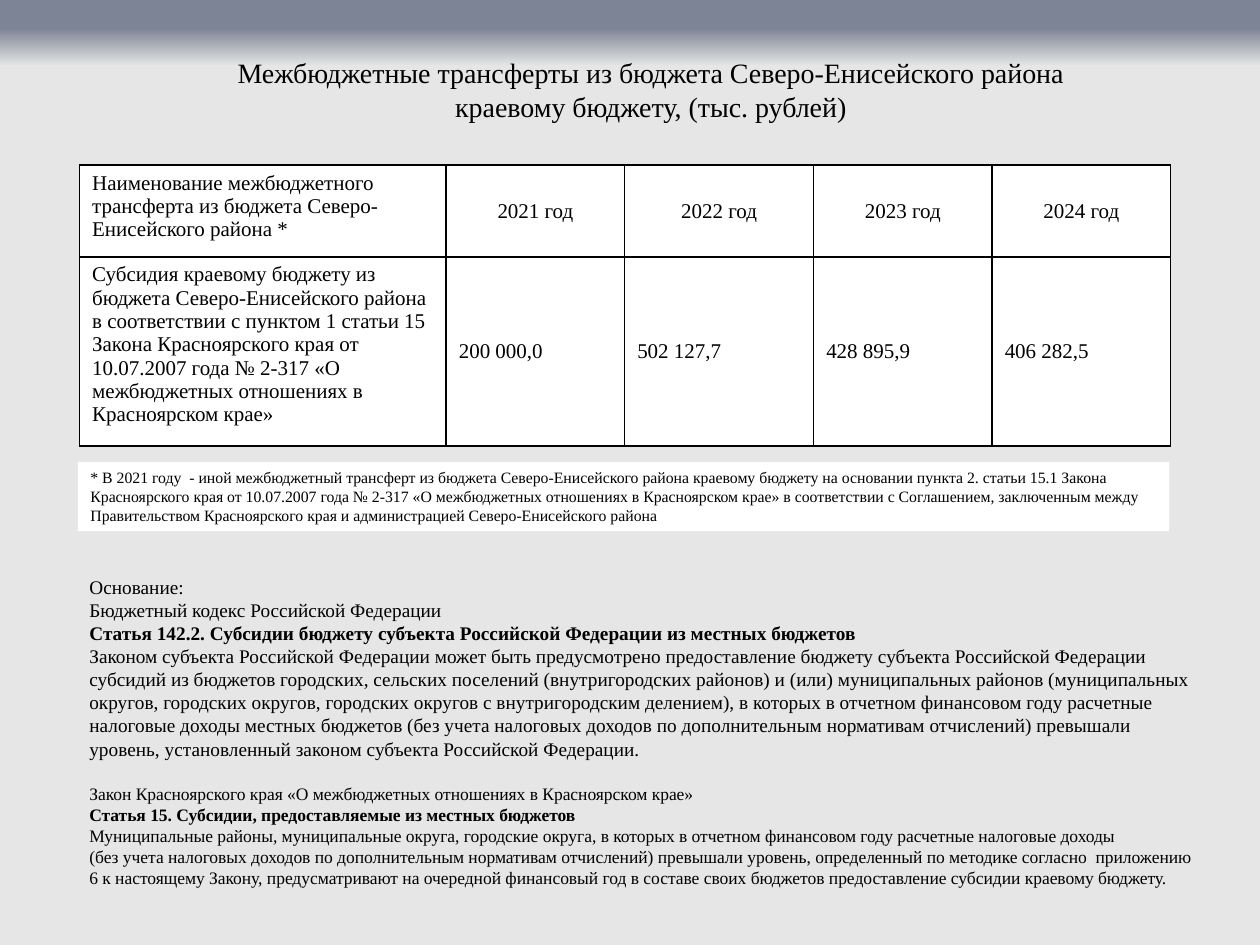
from dataclasses import dataclass

from lxml.etree import SubElement
from pptx import Presentation
from pptx.dml.color import RGBColor
from pptx.enum.shapes import MSO_SHAPE
from pptx.enum.text import MSO_ANCHOR, PP_ALIGN
from pptx.oxml.ns import qn
from pptx.util import Pt

FONT = "Times New Roman"
BLACK, WHITE, SLATE, GREY = "000000", "FFFFFF", "7D8496", "E6E6E6"


@dataclass
class Para:
    text: str
    size: float
    bold: bool = False
    align: PP_ALIGN = PP_ALIGN.LEFT
    before: float = 0


@dataclass
class Box:
    left: float
    top: float
    width: float
    height: float

    def lengths(self) -> list:
        return [Pt(v) for v in (self.left, self.top, self.width, self.height)]


def color(value: str) -> RGBColor:
    return RGBColor.from_string(value)


def apply(target, formats: dict) -> None:
    for name, value in formats.items():
        setattr(target, name, value)


def write(tf, paras: list[Para]) -> None:
    for i, para in enumerate(paras):
        p = tf.add_paragraph() if i else tf.paragraphs[0]
        apply(p, {"alignment": para.align, "space_before": Pt(para.before)})
        r = p.add_run()
        r.text = para.text
        apply(r.font, {"name": FONT, "size": Pt(para.size), "bold": para.bold})
        r.font.color.rgb = color(BLACK)


def add_text(s, box: Box, paras: list[Para], anchor: MSO_ANCHOR) -> None:
    tf = s.shapes.add_textbox(*box.lengths()).text_frame
    apply(tf, {"word_wrap": True, "vertical_anchor": anchor})
    write(tf, paras)


def add_note(s, box: Box, para: Para) -> None:
    sp = s.shapes.add_shape(MSO_SHAPE.RECTANGLE, *box.lengths())
    sp.shadow.inherit = False
    sp.fill.solid()
    sp.fill.fore_color.rgb = color(WHITE)
    sp.line.fill.background()
    apply(sp.text_frame, {"word_wrap": True, "vertical_anchor": MSO_ANCHOR.MIDDLE})
    write(sp.text_frame, [para])


def set_background(s, stops: list[tuple[int, str]]) -> None:
    fill = s.background.fill
    fill.gradient()
    fill.gradient_angle = 270
    gs_list = next(s.element.iter(qn("a:gsLst")))
    for gs in list(gs_list):
        gs_list.remove(gs)
    for percent, value in stops:
        gs = SubElement(gs_list, qn("a:gs"), pos=str(percent * 1000))
        SubElement(gs, qn("a:srgbClr"), val=value)


def add_borders(cell) -> None:
    props = cell._tc.get_or_add_tcPr()
    for i, side in enumerate(("lnL", "lnR", "lnT", "lnB")):
        ln = props.makeelement(qn(f"a:{side}"), {"w": str(Pt(1))})
        props.insert(i, ln)
        SubElement(SubElement(ln, qn("a:solidFill")), qn("a:srgbClr"), val=BLACK)


def add_grid(s, box: Box, widths: list[float], heights: list[float],
             rows: list[list[str]]) -> None:
    table = s.shapes.add_table(len(rows), len(widths), *box.lengths()).table
    for column, width in zip(table.columns, widths):
        column.width = Pt(width)
    for row, height in zip(table.rows, heights):
        row.height = Pt(height)
    for i, texts in enumerate(rows):
        for j, text in enumerate(texts):
            cell = table.cell(i, j)
            cell.fill.solid()
            cell.fill.fore_color.rgb = color(WHITE)
            cell.vertical_anchor = MSO_ANCHOR.MIDDLE if j else MSO_ANCHOR.TOP
            align = PP_ALIGN.CENTER if j and not i else PP_ALIGN.LEFT
            write(cell.text_frame, [Para(text, 12, align=align)])
            add_borders(cell)


TITLE = [
    "Межбюджетные трансферты из бюджета Северо-Енисейского района",
    "краевому бюджету, (тыс. рублей)",
]
ROWS = [
    ["Наименование межбюджетного трансферта из бюджета Северо-Енисейского района *",
     *(f"{year} год" for year in range(2021, 2025))],
    ["Субсидия краевому бюджету из бюджета Северо-Енисейского района в соответствии "
     "с пунктом 1 статьи 15 Закона Красноярского края от 10.07.2007 года № 2-317 "
     "«О межбюджетных отношениях в Красноярском крае»",
     "200 000,0", "502 127,7", "428 895,9", "406 282,5"],
]
NOTE = (
    "* В 2021 году  - иной межбюджетный трансферт из бюджета Северо-Енисейского района "
    "краевому бюджету на основании пункта 2. статьи 15.1 Закона Красноярского края "
    "от 10.07.2007 года № 2-317 «О межбюджетных отношениях в Красноярском крае» "
    "в соответствии с Соглашением, заключенным между Правительством Красноярского края "
    "и администрацией Северо-Енисейского района"
)
BASIS = [
    Para("Основание:", 11),
    Para("Бюджетный кодекс Российской Федерации", 11),
    Para("Статья 142.2. Субсидии бюджету субъекта Российской Федерации "
         "из местных бюджетов", 11, bold=True),
    Para("Законом субъекта Российской Федерации может быть предусмотрено предоставление "
         "бюджету субъекта Российской Федерации субсидий из бюджетов городских, сельских "
         "поселений (внутригородских районов) и (или) муниципальных районов (муниципальных "
         "округов, городских округов, городских округов с внутригородским делением), "
         "в которых в отчетном финансовом году расчетные налоговые доходы местных бюджетов "
         "(без учета налоговых доходов по дополнительным нормативам отчислений) превышали "
         "уровень, установленный законом субъекта Российской Федерации.", 11),
    Para("Закон Красноярского края «О межбюджетных отношениях в Красноярском крае»",
         10, before=13),
    Para("Статья 15. Субсидии, предоставляемые из местных бюджетов", 10, bold=True),
    Para("Муниципальные районы, муниципальные округа, городские округа, в которых "
         "в отчетном финансовом году расчетные налоговые доходы", 10),
    Para("(без учета налоговых доходов по дополнительным нормативам отчислений) превышали "
         "уровень, определенный по методике согласно  приложению 6 к настоящему Закону, "
         "предусматривают на очередной финансовый год в составе своих бюджетов "
         "предоставление субсидии краевому бюджету.", 10),
]


def main() -> None:
    prs = Presentation()
    apply(prs, {"slide_width": Pt(720), "slide_height": Pt(540)})
    s = prs.slides.add_slide(prs.slide_layouts[6])
    set_background(s, [(0, SLATE), (3, SLATE), (7, GREY), (100, GREY)])
    add_text(s, Box(44, 325, 648, 190), BASIS, MSO_ANCHOR.TOP)
    add_grid(s, Box(45.5, 94.3, 623.5, 160.5), [209.5, 102, 108, 102, 102],
             [52.5, 108], ROWS)
    add_text(s, Box(48, 26, 648, 50),
             [Para(text, 16, align=PP_ALIGN.CENTER) for text in TITLE], MSO_ANCHOR.MIDDLE)
    add_note(s, Box(44.6, 264, 623.5, 39.5), Para(NOTE, 9))
    prs.save("out.pptx")


if __name__ == "__main__":
    main()
